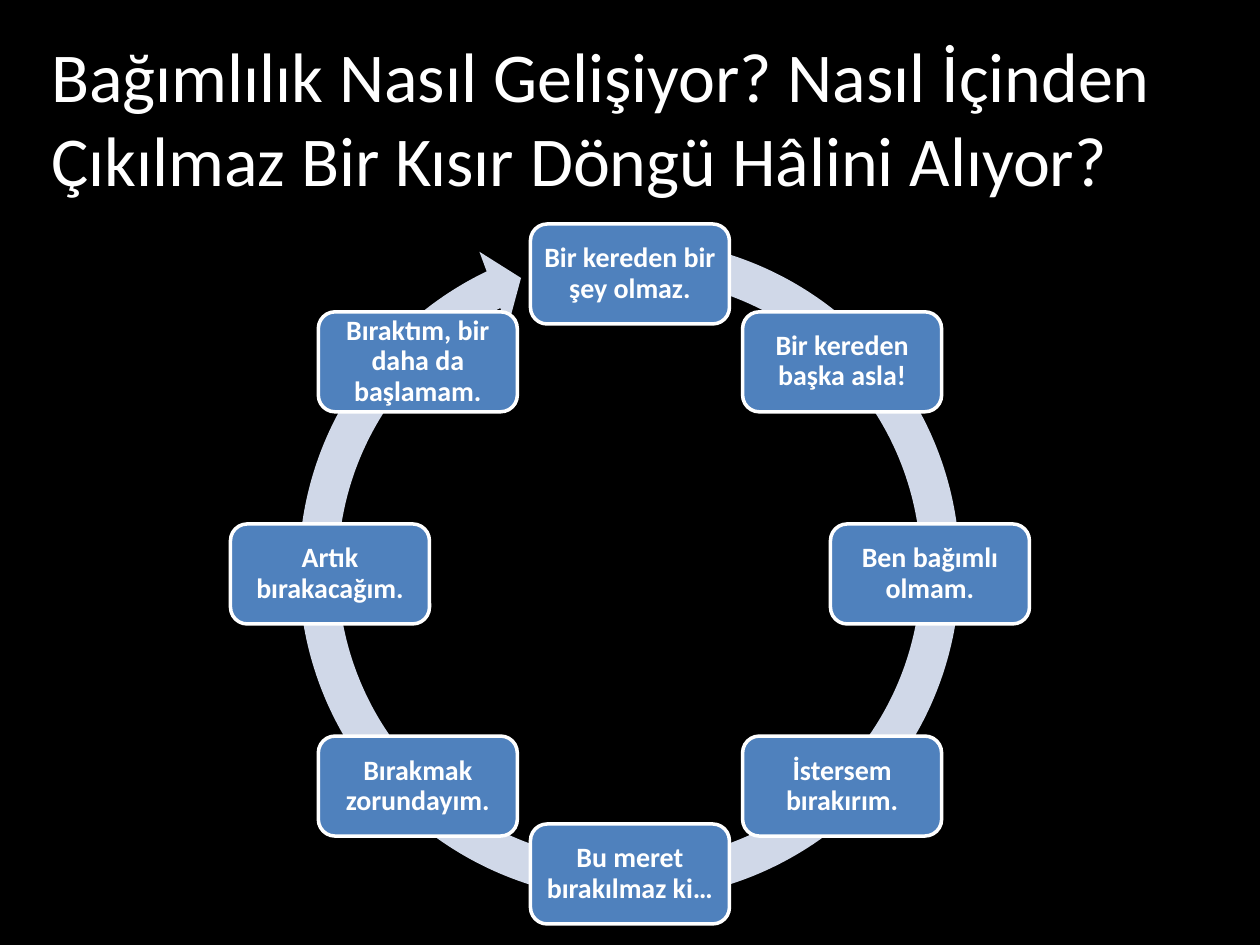
from math import cos, pi, sin
from pptx import Presentation
from pptx.dml.color import RGBColor
from pptx.enum.shapes import MSO_SHAPE
from pptx.enum.text import MSO_ANCHOR, PP_ALIGN
from pptx.util import Pt

HUES = {"back": "000000", "text": "FFFFFF", "ring": "D0D8E8", "box": "4F81BD"}
STEPS = [
    "Bir kereden bir şey olmaz.",
    "Bir kereden başka asla!",
    "Ben bağımlı olmam.",
    "İstersem bırakırım.",
    "Bu meret bırakılmaz ki…",
    "Bırakmak zorundayım.",
    "Artık bırakacağım.",
    "Bıraktım, bir daha da başlamam.",
]
MID_X, MID_Y, RADIUS = 630, 574, 300
WIDE, HIGH = 199, 100


def px(num):
    return round(num * 914400 / 126)


def style(font, size, bold):
    font.name = "Calibri"
    font.size = Pt(size)
    font.bold = bold
    font.color.rgb = RGBColor.from_string(HUES["text"])


deck = Presentation()
deck.slide_width, deck.slide_height = px(1260), px(945)
slide = deck.slides.add_slide(deck.slide_layouts[6])
slide.background.fill.solid()
slide.background.fill.fore_color.rgb = RGBColor.from_string(HUES["back"])

title = slide.shapes.add_textbox(px(39), px(26), px(1221), px(183))
title.text_frame.word_wrap = True
title.text_frame.text = "Bağımlılık Nasıl Gelişiyor? Nasıl İçinden Çıkılmaz Bir Kısır Döngü Hâlini Alıyor?"
style(title.text_frame.paragraphs[0].runs[0].font, 40, False)

cycle = slide.shapes.add_group_shape()
ring = cycle.shapes.add_shape(MSO_SHAPE.CIRCULAR_ARROW, px(278), px(218), px(703), px(703))
for i, part in enumerate([5.54, 330.7, 14645.1, 16876.6, 5.76]):
    ring.adjustments[i] = part / 100
ring.shadow.inherit = False
ring.fill.solid()
ring.fill.fore_color.rgb = RGBColor.from_string(HUES["ring"])
ring.line.fill.background()

for i, step in enumerate(STEPS):
    turn = 2 * pi * i / len(STEPS)
    left = MID_X + RADIUS * sin(turn) - WIDE / 2
    top = MID_Y - RADIUS * cos(turn) - HIGH / 2
    box = cycle.shapes.add_shape(MSO_SHAPE.ROUNDED_RECTANGLE, px(left), px(top), px(WIDE), px(HIGH))
    box.shadow.inherit = False
    box.fill.solid()
    box.fill.fore_color.rgb = RGBColor.from_string(HUES["box"])
    box.line.color.rgb = RGBColor.from_string(HUES["text"])
    box.line.width = Pt(2)
    frame = box.text_frame
    frame.word_wrap = True
    frame.vertical_anchor = MSO_ANCHOR.MIDDLE
    frame.margin_left = frame.margin_right = px(9)
    frame.margin_top = frame.margin_bottom = px(9)
    frame.text = step
    para = frame.paragraphs[0]
    para.alignment = PP_ALIGN.CENTER
    para.line_spacing = 0.9
    style(para.runs[0].font, 16, True)

deck.save("out.pptx")
